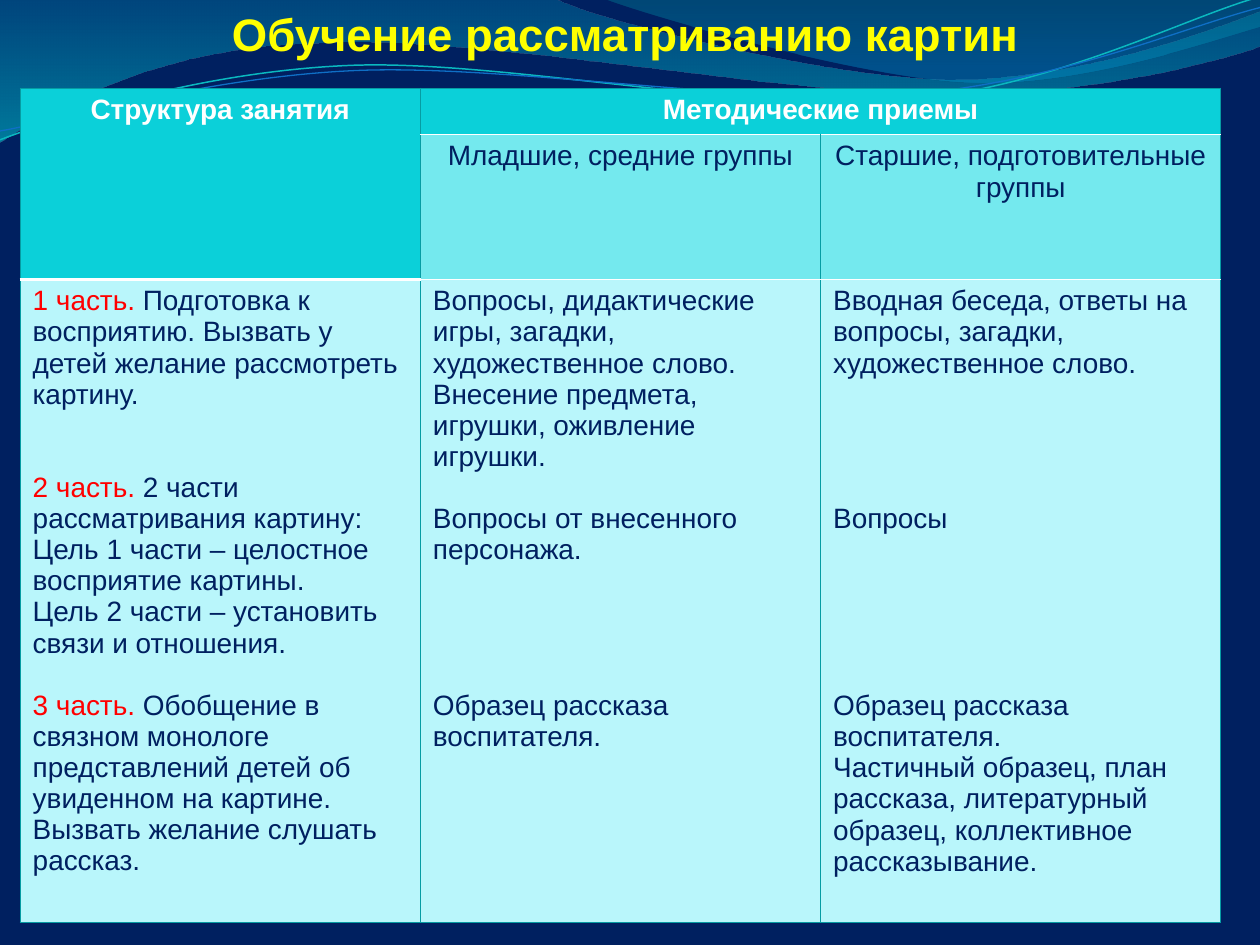
from lxml import etree
from pptx import Presentation, util as u
from pptx.dml.color import RGBColor
from pptx.enum import text
from pptx.oxml import parse_xml
from pptx.oxml.ns import qn

NAVY = RGBColor(0x00, 0x20, 0x60)
YELLOW = RGBColor(0xFF, 0xFF, 0x00)
WHITE = RGBColor(0xFF, 0xFF, 0xFF)
RED = RGBColor(0xFF, 0x00, 0x00)
TURQUOISE = RGBColor(0x0B, 0xD0, 0xD9)
MID_TURQUOISE = RGBColor(0x74, 0xE9, 0xEE)
PALE_TURQUOISE = RGBColor(0xB9, 0xF6, 0xFB)
BORDER = RGBColor(0x06, 0x9C, 0xA3)
LINE_TEAL = RGBColor(0x0A, 0xB8, 0xBF)
LINE_BLUE = RGBColor(0x0F, 0x6F, 0xC6)

FONT = "Arial"
BODY_SIZE = 16
LINE_PITCH = 17.8
DRAWING_NS = "http://schemas.openxmlformats.org/drawingml/2006/main"

# Wave outlines in inches: a pair is a straight segment, six numbers are a Bezier curve.
UPPER_WAVE = [(0, 0), (4.4, -0.01), (4.76, 0.17, 6.64, 0.63, 7.58, 0.63),
              (8.53, 0.63, 9.58, 0.26, 10, 0.09), (10.01, 0.36),
              (9.83, 0.44, 8.7, 0.76, 7.46, 0.75), (6.22, 0.75, 3.82, 0.28, 2.57, 0.34),
              (1.29, 0.36, 0.46, 0.83, -0.01, 1.13)]
RIGHT_WAVE = [(4.79, -0.01), (5.09, 0.11, 6.82, 0.62, 7.69, 0.65),
              (8.56, 0.69, 9.61, 0.32, 10, 0.21), (10, 0)]
TEAL_STRAND = [(0, 1.11), (0.48, 0.93, 1.58, 0.57, 2.77, 0.52),
               (3.95, 0.47, 5.93, 0.89, 7.13, 0.8), (8.33, 0.71, 9.38, 0.15, 9.98, -0.02)]
BLUE_STRAND = [(0, 1.04), (0.47, 0.96, 1.64, 0.61, 2.83, 0.56),
               (4.03, 0.51, 5.97, 0.84, 7.17, 0.75), (8.36, 0.67, 9.41, 0.21, 10, 0.06)]

# Body columns: (blank lines above, red lead, wording).
COLUMNS = [
    [(0, "1 часть. ", "Подготовка к восприятию. Вызвать у детей желание рассмотреть картину."),
     (2, "2 часть. ", "2 части рассматривания картину:"),
     (0, "", "Цель 1 части – целостное восприятие картины."),
     (0, "", "Цель 2 части – установить связи и отношения."),
     (1, "3 часть. ", "Обобщение в связном монологе представлений детей об увиденном "
                      "на картине. Вызвать желание слушать рассказ.")],
    [(0, "", "Вопросы, дидактические игры, загадки, художественное слово."),
     (0, "", "Внесение предмета, игрушки, оживление игрушки."),
     (1, "", "Вопросы от внесенного персонажа."),
     (4, "", "Образец рассказа воспитателя.")],
    [(0, "", "Вводная беседа, ответы на вопросы, загадки, художественное слово."),
     (4, "", "Вопросы"),
     (5, "", "Образец рассказа воспитателя."),
     (0, "", "Частичный образец, план рассказа, литературный образец, "
             "коллективное рассказывание.")],
]


def add_outline(slide, outline, close):
    """Draw straight segments between the anchors, then bend those that are curves."""
    anchors = [(u.Inches(segment[-2]), u.Inches(segment[-1])) for segment in outline]
    builder = slide.shapes.build_freeform(*anchors[0])
    builder.add_line_segments(anchors[1:], close=close)
    shape = builder.convert_to_shape()
    shape.shadow.inherit = False
    straight_segments = list(shape.element.iter(qn("a:lnTo")))
    for element, segment in zip(straight_segments, outline[1:]):
        if len(segment) == 6:
            element.tag = qn("a:cubicBezTo")
            for index in (0, 2):
                point = etree.Element(qn("a:pt"),
                                      x=str(u.Inches(segment[index]) - shape.left),
                                      y=str(u.Inches(segment[index + 1]) - shape.top))
                element.insert(index // 2, point)
    return shape


def add_wave(slide, outline, stops):
    """Add a filled wave; each stop is (position %, colour, opacity %)."""
    shape = add_outline(slide, outline, True)
    shape.line.fill.background()
    marks = "".join(
        f'<a:gs pos="{position * 1000}"><a:srgbClr val="{colour}">'
        f'<a:alpha val="{opacity * 1000}"/></a:srgbClr></a:gs>'
        for position, colour, opacity in stops)
    gradient = parse_xml(f'<a:gradFill xmlns:a="{DRAWING_NS}"><a:gsLst>{marks}</a:gsLst>'
                         '<a:lin ang="5400000" scaled="0"/></a:gradFill>')
    shape.element.spPr.find(qn("a:custGeom")).addnext(gradient)


def add_strand(slide, outline, colour, width):
    shape = add_outline(slide, outline, False)
    shape.fill.background()
    shape.line.color.rgb = colour
    shape.line.width = u.Pt(width)


def add_backdrop(slide):
    slide.background.fill.solid()
    slide.background.fill.fore_color.rgb = NAVY
    add_wave(slide, UPPER_WAVE, [(0, "0074A1", 45), (100, "00C6CF", 55)])
    add_wave(slide, RIGHT_WAVE, [(0, "00A1A9", 30), (80, "008BBF", 45)])
    add_strand(slide, TEAL_STRAND, LINE_TEAL, 0.85)
    add_strand(slide, BLUE_STRAND, LINE_BLUE, 0.75)


def format_run(run, size, colour, bold=False):
    run.font.name = FONT
    run.font.size = u.Pt(size)
    run.font.bold = bold
    run.font.color.rgb = colour


def add_title(slide, left, top, width, height):
    frame = slide.shapes.add_textbox(left, top, width, height).text_frame
    frame.word_wrap = True
    frame.margin_left, frame.margin_right = 0, u.Inches(0.07)
    frame.margin_top = u.Inches(0.05)
    frame.text = "Обучение рассматриванию картин"
    paragraph = frame.paragraphs[0]
    paragraph.alignment = text.PP_ALIGN.CENTER
    format_run(paragraph.runs[0], 26, YELLOW, True)


def style_cell(cell, fill, top=(BORDER, 0.75), bottom=(BORDER, 0.75)):
    side = (BORDER, 0.75)
    properties = cell._tc.get_or_add_tcPr()
    for tag, (colour, width) in zip(("lnL", "lnR", "lnT", "lnB"), (side, side, top, bottom)):
        line = etree.SubElement(properties, qn(f"a:{tag}"), w=str(u.Pt(width)))
        solid = etree.SubElement(line, qn("a:solidFill"))
        etree.SubElement(solid, qn("a:srgbClr"), val=str(colour))
    cell.fill.solid()
    cell.fill.fore_color.rgb = fill


def shrink_spanned_cell(cell):
    """Give a covered, empty cell the body size so that it does not stretch its row."""
    etree.SubElement(cell.text_frame.paragraphs[0]._p, qn("a:endParaRPr"),
                     sz=str(BODY_SIZE * 100))


def write_heading(cell, wording, colour, bold):
    cell.text_frame.text = wording
    paragraph = cell.text_frame.paragraphs[0]
    paragraph.alignment = text.PP_ALIGN.CENTER
    format_run(paragraph.runs[0], BODY_SIZE, colour, bold)


def write_body(cell, entries):
    frame = cell.text_frame
    for index, (gap, lead, wording) in enumerate(entries):
        paragraph = frame.add_paragraph() if index else frame.paragraphs[0]
        if gap:
            paragraph.space_before = u.Pt(round(gap * LINE_PITCH, 1))
        for part, colour in ((lead, RED), (wording, NAVY)):
            if part:
                run = paragraph.add_run()
                run.text = part
                format_run(run, BODY_SIZE, colour)


def add_methods_table(slide, left, top, width, row_heights):
    """Add the table; rows lower than their text grow to hold it."""
    table = slide.shapes.add_table(3, 3, left, top, width, sum(row_heights)).table
    for row, height in zip(table.rows, row_heights):
        row.height = height
    for column in table.columns:
        column.width = width // 3

    thin, thick = (WHITE, 1), (WHITE, 2)
    for index in range(3):
        structure = index == 0
        style_cell(table.cell(0, index), TURQUOISE, bottom=thick if structure else thin)
        style_cell(table.cell(1, index), TURQUOISE if structure else MID_TURQUOISE,
                   top=thin, bottom=thick if structure else thin)
        style_cell(table.cell(2, index), PALE_TURQUOISE, top=thick if structure else thin)
        write_body(table.cell(2, index), COLUMNS[index])

    table.cell(0, 0).merge(table.cell(1, 0))
    table.cell(0, 1).merge(table.cell(0, 2))
    shrink_spanned_cell(table.cell(1, 0))
    shrink_spanned_cell(table.cell(0, 2))
    write_heading(table.cell(0, 0), "Структура занятия", WHITE, True)
    write_heading(table.cell(0, 1), "Методические приемы", WHITE, True)
    write_heading(table.cell(1, 1), "Младшие, средние группы", NAVY, False)
    write_heading(table.cell(1, 2), "Старшие, подготовительные группы", NAVY, False)


def main():
    presentation = Presentation()
    presentation.slide_width, presentation.slide_height = u.Inches(10), u.Inches(7.5)
    slide = presentation.slides.add_slide(presentation.slide_layouts[6])
    add_backdrop(slide)
    add_title(slide, 0, 0, presentation.slide_width, presentation.slide_height)
    add_methods_table(slide, u.Inches(0.16), u.Inches(0.7), u.Inches(9.53),
                      [u.Inches(height) for height in (0.15, 1.15, 0.47)])
    presentation.save("out.pptx")


if __name__ == "__main__":
    main()
